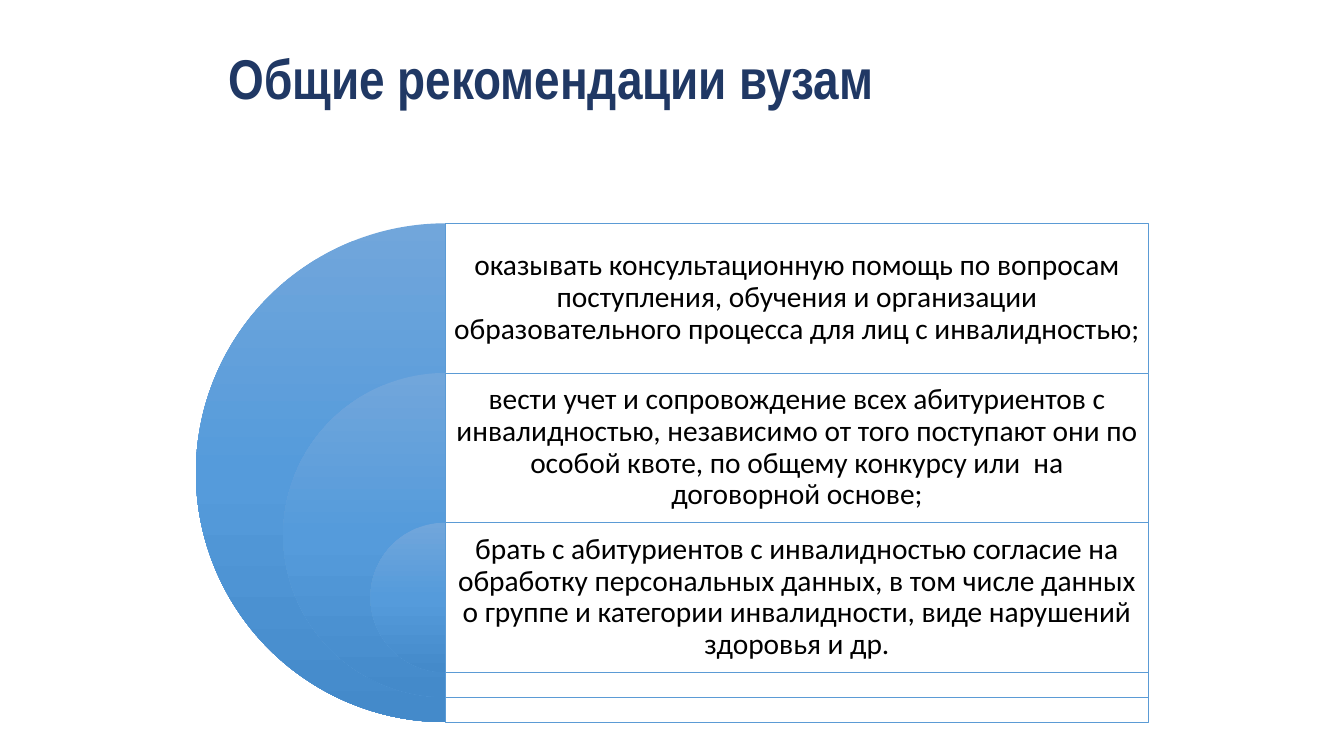
from copy import deepcopy
from dataclasses import dataclass

from lxml import etree
from pptx import Presentation
from pptx.dml.color import RGBColor
from pptx.enum.shapes import MSO_SHAPE
from pptx.enum.text import MSO_ANCHOR, PP_ALIGN
from pptx.oxml.ns import qn
from pptx.shapes.autoshape import Shape
from pptx.shapes.shapetree import GroupShapes
from pptx.util import Pt

PIE, RECT = MSO_SHAPE.PIE, MSO_SHAPE.RECTANGLE
MIDDLE = MSO_ANCHOR.MIDDLE
LEFT, CENTER = PP_ALIGN.LEFT, PP_ALIGN.CENTER

NAVY = RGBColor(0x20, 0x38, 0x64)
BLACK = RGBColor(0x00, 0x00, 0x00)
WHITE = RGBColor(0xFF, 0xFF, 0xFF)
BLUE = RGBColor(0x5B, 0x9B, 0xD5)
SHADES = (
    (0.0, RGBColor(0x71, 0xA6, 0xDB)),
    (0.5, RGBColor(0x55, 0x9B, 0xDB)),
    (1.0, RGBColor(0x44, 0x8A, 0xCA)),
)

# Diagram measures, in points
AXIS, TOP = 318.1, 159.5
WIDTH, ROW, STRIP = 502.4, 106.9, 17.8
INSET = 6.3

ADVICE = (
    "оказывать консультационную помощь по вопросам поступления, обучения и "
    "организации образовательного процесса для лиц с инвалидностью;",
    "вести учет и сопровождение всех абитуриентов с инвалидностью, независимо "
    "от того поступают они по особой квоте, по общему конкурсу или  на "
    "договорной основе;",
    "брать с абитуриентов с инвалидностью согласие на обработку персональных "
    "данных, в том числе данных о группе и категории инвалидности, виде "
    "нарушений здоровья и др.",
)


@dataclass(frozen=True)
class Box:
    left: float
    top: float
    width: float
    height: float

    def points(self) -> tuple[Pt, Pt, Pt, Pt]:
        return Pt(self.left), Pt(self.top), Pt(self.width), Pt(self.height)


@dataclass(frozen=True)
class Style:
    font: str
    size: float
    color: RGBColor
    bold: bool
    align: PP_ALIGN
    after: float


TITLE = Style("Arial Narrow", 40, NAVY, True, LEFT, 0)
BODY = Style("Calibri", 21, BLACK, False, CENTER, 7.35)


def add_text(shapes, box: Box, text: str, style: Style) -> Shape:
    label = shapes.add_textbox(*box.points())
    frame = label.text_frame
    frame.word_wrap = True
    frame.vertical_anchor = MIDDLE
    frame.text = text
    para = frame.paragraphs[0]
    para.alignment = style.align
    para.line_spacing = 0.9
    para.space_after = Pt(style.after)
    font = para.runs[0].font
    font.name, font.size, font.bold = style.font, Pt(style.size), style.bold
    font.color.rgb = style.color
    return label


def add_pie(shapes: GroupShapes, box: Box) -> None:
    pie = shapes.add_shape(PIE, *box.points())
    pie.shadow.inherit = False
    pie.adjustments[0], pie.adjustments[1] = 54, 162
    pie.line.fill.background()
    pie.fill.gradient()
    pie.fill.gradient_angle = 270
    # Add the middle stop
    stops = pie.element.spPr.find(".//" + qn("a:gsLst"))
    stops.insert(1, deepcopy(stops[0]))
    for stop, (place, color) in zip(pie.fill.gradient_stops, SHADES):
        stop.position = place
        stop.color.rgb = color


def add_panel(shapes: GroupShapes, box: Box) -> None:
    panel = shapes.add_shape(RECT, *box.points())
    panel.shadow.inherit = False
    panel.fill.solid()
    panel.fill.fore_color.rgb = WHITE
    white = panel.element.spPr.find(qn("a:solidFill"))[0]
    etree.SubElement(white, qn("a:alpha")).set("val", "90000")
    panel.line.color.rgb = BLUE
    panel.line.width = Pt(0.5)


def add_layer(shapes: GroupShapes, index: int, text: str) -> None:
    top = TOP + index * ROW
    rest = len(ADVICE) - 1 - index
    size = ROW + rest * (ROW + STRIP)
    add_pie(shapes, Box(AXIS - size / 2, top, size, size))
    add_panel(shapes, Box(AXIS, top, WIDTH, size))
    label = add_text(shapes, Box(AXIS, top, WIDTH, ROW), text, BODY)
    frame = label.text_frame
    frame.margin_left = frame.margin_right = Pt(INSET)
    frame.margin_top = frame.margin_bottom = Pt(INSET)


def main() -> None:
    deck = Presentation()
    deck.slide_width, deck.slide_height = Pt(960), Pt(540)
    slide = deck.slides.add_slide(deck.slide_layouts[6])

    # Heading
    add_text(slide.shapes, Box(156.2, 13, 648, 90),
             "Общие рекомендации вузам", TITLE)

    # Nested layers, back to front
    group = slide.shapes.add_group_shape()
    for index, text in enumerate(ADVICE):
        add_layer(group.shapes, index, text)

    deck.save("out.pptx")


if __name__ == "__main__":
    main()
